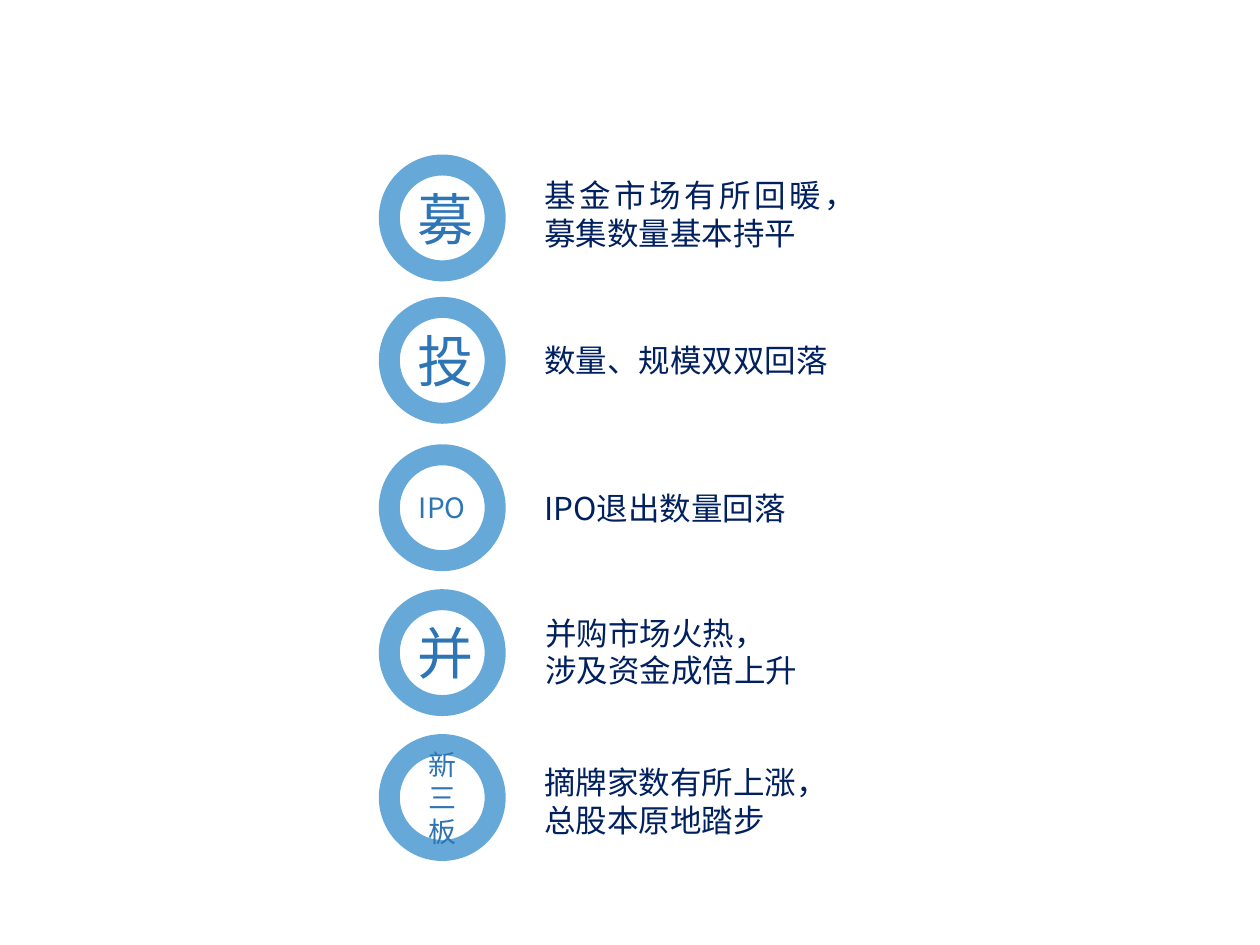
from dataclasses import dataclass

from lxml.etree import SubElement
from pptx import Presentation
from pptx.dml.color import RGBColor
from pptx.enum.shapes import MSO_SHAPE
from pptx.enum.text import MSO_ANCHOR, MSO_AUTO_SIZE, PP_ALIGN
from pptx.oxml.ns import qn
from pptx.util import Inches, Pt


@dataclass(frozen=True)
class Theme:
    ring: RGBColor = RGBColor(0x00, 0x70, 0xC0)
    mark: RGBColor = RGBColor(0x2E, 0x75, 0xB6)
    note: RGBColor = RGBColor(0x00, 0x20, 0x60)
    alpha: int = 60
    width: int = 12
    large: int = 32
    small: int = 16
    body: int = 18
    mark_font: str = "Noto Sans CJK JP"
    note_font: str = "Noto Sans CJK SC"


THEME = Theme()
RING_LEFT, RING_SIZE = 3.09, 0.84
ONE_LINE, TWO_LINES = 0.4, 0.71

ROWS = [
    ("募", 1.31, "基金市场有所回暖，募集数量基本持平", 4.22, 1.35, 2.42, TWO_LINES),
    ("投", 2.44, "数量、规模双双回落", 4.22, 2.66, 2.69, ONE_LINE),
    ("IPO", 3.61, "IPO退出数量回落", 4.22, 3.83, 2.49, ONE_LINE),
    ("并", 4.76, "并购市场火热，\n涉及资金成倍上升", 4.23, 4.82, 2.91, TWO_LINES),
    ("新三板", 5.91, "摘牌家数有所上涨，\n总股本原地踏步", 4.22, 6.01, 2.83, TWO_LINES),
]


def style(frame, align, size, face, color):
    for para in frame.paragraphs:
        para.alignment = align
        for run in para.runs:
            font = run.font
            font.size = Pt(size)
            font.name = face
            font.color.rgb = color
            SubElement(font._element, qn("a:ea"), typeface=face)


def add_ring(slide, mark, top):
    ring = slide.shapes.add_shape(
        MSO_SHAPE.OVAL, Inches(RING_LEFT), Inches(top),
        Inches(RING_SIZE), Inches(RING_SIZE))
    ring.shadow.inherit = False
    ring.fill.background()
    ring.line.width = Pt(THEME.width)
    ring.line.color.rgb = THEME.ring
    color = ring.line._ln.find(".//" + qn("a:srgbClr"))
    SubElement(color, qn("a:alpha"), val=str(THEME.alpha * 1000))
    frame = ring.text_frame
    frame.word_wrap = True
    frame.vertical_anchor = MSO_ANCHOR.MIDDLE
    frame.text = mark
    size = THEME.large if len(mark) == 1 else THEME.small
    style(frame, PP_ALIGN.CENTER, size, THEME.mark_font, THEME.mark)


def add_note(slide, text, left, top, width, height):
    box = slide.shapes.add_textbox(
        Inches(left), Inches(top), Inches(width), Inches(height))
    frame = box.text_frame
    frame.word_wrap = True
    frame.auto_size = MSO_AUTO_SIZE.SHAPE_TO_FIT_TEXT
    frame.text = text
    style(frame, PP_ALIGN.JUSTIFY, THEME.body, THEME.note_font, THEME.note)


def main():
    deck = Presentation()
    deck.slide_width = Inches(10)
    deck.slide_height = Inches(7.5)
    slide = deck.slides.add_slide(deck.slide_layouts[6])
    for mark, ring_top, text, *place in ROWS:
        add_ring(slide, mark, ring_top)
        add_note(slide, text, *place)
    deck.save("out.pptx")


if __name__ == "__main__":
    main()
